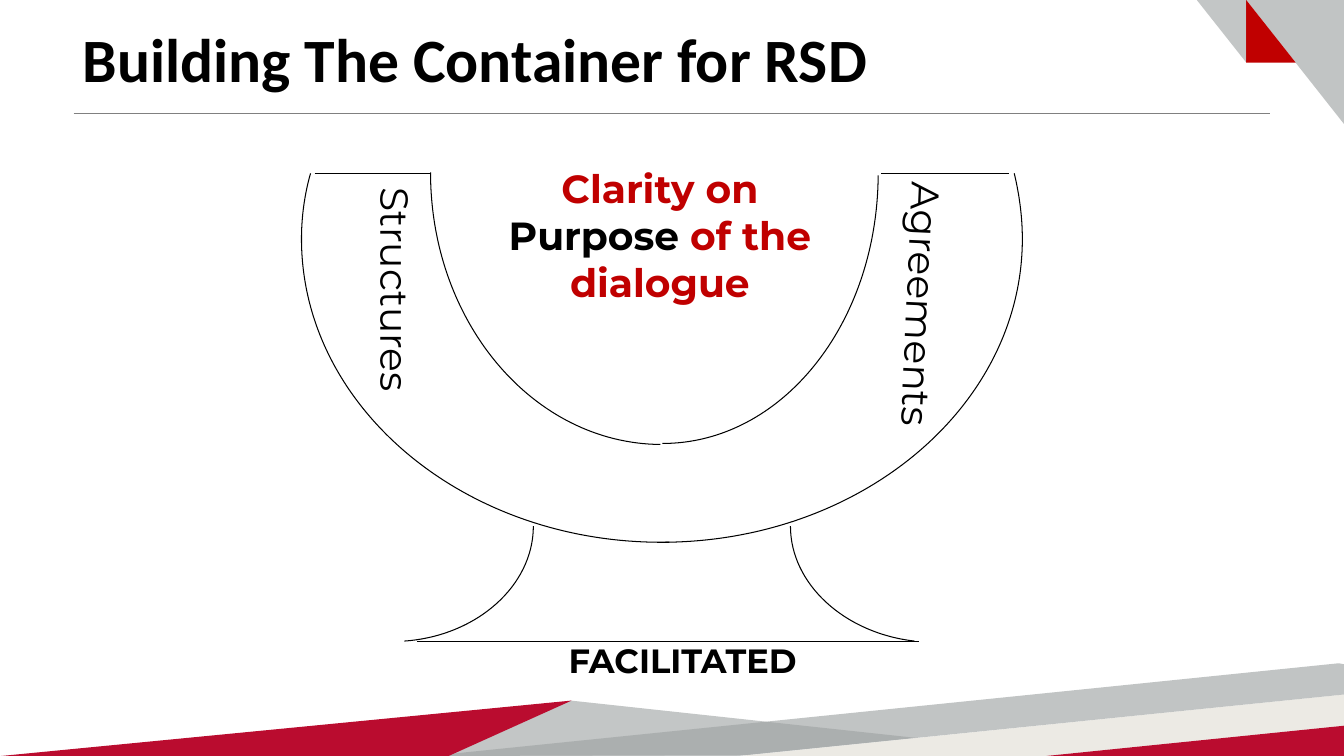
from dataclasses import dataclass
from typing import NamedTuple, Optional

from lxml.etree import SubElement
from pptx import Presentation
from pptx.dml.color import RGBColor
from pptx.enum.shapes import MSO_CONNECTOR
from pptx.enum.text import MSO_ANCHOR, MSO_AUTO_SIZE, PP_ALIGN
from pptx.oxml.ns import qn
from pptx.util import Inches, Pt

Point = tuple[float, float]


@dataclass(frozen=True)
class Theme:
    black: str = "000000"
    grey: str = "9EA2A2"
    sand: str = "D6D2C4"
    crimson: str = "BA0C2F"
    red: str = "C00000"
    rule: str = "808080"
    title_font: str = "Calibri"
    body_font: str = "Montserrat"
    title_size: int = 44
    body_size: int = 28
    caption_size: int = 24
    outline: float = 0.75
    hairline: float = 0.25


THEME = Theme()


class Facet(NamedTuple):
    corners: list[Point]
    color: str
    opacity: int = 100


class Line(NamedTuple):
    start: Point
    end: Point
    color: str = THEME.black
    width: float = THEME.outline


class Curve(NamedTuple):
    """Cubic Bezier pieces end to end: a start, then three points per piece."""
    points: list[Point]


class Run(NamedTuple):
    text: str
    color: str = THEME.black


class Label(NamedTuple):
    box: tuple[float, float, float, float]
    runs: list[Run]
    size: int = THEME.body_size
    bold: bool = False
    vertical: bool = False
    rotation: float = 0
    wrap: bool = True
    space_after: Optional[int] = None


FACETS = [
    Facet([(13.33, 0), (12.36, 0), (13.33, 1.23)], THEME.grey, 63),
    Facet([(12.36, 0.62), (12.85, 0.62), (12.36, 0)], THEME.red),
    Facet([(12.36, 0), (11.87, 0), (12.36, 0.62)], THEME.grey, 61),
    Facet([(4.44, 7.5), (7.4, 7.49), (9.08, 7.32), (5.66, 6.95)], THEME.grey, 61),
    Facet([(10.39, 7.5), (13.33, 7.2), (13.33, 6.89), (7.34, 7.5)], THEME.sand, 45),
    Facet([(13.33, 7.5), (13.33, 7.2), (10.38, 7.5)], THEME.crimson),
    Facet([(4.26, 7.5), (7.32, 7.5), (13.33, 6.89), (13.33, 6.59), (13.28, 6.58)],
          THEME.grey, 63),
    Facet([(0.01, 7.5), (5.67, 6.95), (4.45, 7.5)], THEME.crimson),
]
TITLE_RULE = Line((0.73, 1.12), (12.6, 1.12), THEME.rule, THEME.hairline)

VESSEL_CURVES = [
    Curve([(6.6, 5.38), (8.56, 5.36), (10.14, 4.02), (10.14, 2.37),
           (10.14, 2.15), (10.11, 1.93), (10.06, 1.72)]),
    Curve([(6.64, 5.38), (6.61, 5.38), (6.59, 5.38), (6.56, 5.38),
           (4.59, 5.38), (2.99, 4.03), (2.99, 2.37),
           (2.99, 2.15), (3.02, 1.93), (3.08, 1.72)]),
    Curve([(6.55, 4.41), (5.29, 4.4), (4.27, 3.2), (4.27, 1.71)]),
    Curve([(6.57, 4.4), (7.75, 4.4), (8.7, 3.22), (8.71, 1.74)]),
    Curve([(4.01, 6.36), (4.73, 6.31), (5.29, 5.81), (5.29, 5.22)]),
    Curve([(9.07, 6.36), (8.37, 6.28), (7.84, 5.79), (7.84, 5.22)]),
]
VESSEL_LINES = [
    Line((3.12, 1.72), (4.27, 1.72)),
    Line((8.74, 1.72), (10.01, 1.72)),
    Line((4.14, 6.36), (9.12, 6.36)),
]
PURPOSE = Label((4.76, 1.58, 3.57, 0.43),
                [Run("Clarity on ", THEME.red), Run("Purpose"),
                 Run(" of the dialogue", THEME.red)],
                bold=True, space_after=12)
SIDE_LABELS = [
    Label((8.75, 1.71, 0.67, 2.98), [Run("Agreements")], vertical=True, rotation=2.6),
    Label((3.54, 1.76, 0.67, 2.38), [Run("Structures")], vertical=True, wrap=False),
]
CAPTION = Label((2.6, 6.3, 8.34, 0.5), [Run("FACILITATED")],
                size=THEME.caption_size, bold=True)


def rgb(color: str) -> RGBColor:
    return RGBColor.from_string(color)


def add_outline(shapes, points: list[Point], closed: bool):
    (start, *rest) = [(Inches(x), Inches(y)) for x, y in points]
    builder = shapes.build_freeform(*start, scale=1.0)
    builder.add_line_segments(rest, close=closed)
    shape = builder.convert_to_shape()
    shape.shadow.inherit = False
    return shape


def add_facet(shapes, facet: Facet) -> None:
    shape = add_outline(shapes, facet.corners, closed=True)
    shape.fill.solid()
    shape.fill.fore_color.rgb = rgb(facet.color)
    shape.line.fill.background()
    if facet.opacity < 100:
        color = shape.fill._xPr.find(f"{qn('a:solidFill')}/{qn('a:srgbClr')}")
        SubElement(color, qn("a:alpha"), val=str(facet.opacity * 1000))


def bend_segments(shape) -> None:
    """Merge every three straight segments into one cubic Bezier segment."""
    outline = next(shape._element.iter(qn("a:path")))
    segments = outline.findall(qn("a:lnTo"))
    for first in range(0, len(segments), 3):
        bezier = SubElement(outline, qn("a:cubicBezTo"))
        for segment in segments[first:first + 3]:
            bezier.append(segment[0])
            outline.remove(segment)


def add_curve(shapes, curve: Curve) -> None:
    shape = add_outline(shapes, curve.points, closed=False)
    bend_segments(shape)
    shape.fill.background()
    shape.line.color.rgb = rgb(THEME.black)
    shape.line.width = Pt(THEME.outline)


def add_line(shapes, line: Line) -> None:
    ends = [Inches(value) for value in (*line.start, *line.end)]
    connector = shapes.add_connector(MSO_CONNECTOR.STRAIGHT, *ends)
    connector.line.color.rgb = rgb(line.color)
    connector.line.width = Pt(line.width)
    SubElement(connector._element.spPr, qn("a:effectLst"))


def add_label(shapes, label: Label) -> None:
    shape = shapes.add_textbox(*map(Inches, label.box))
    shape.rotation = label.rotation
    frame = shape.text_frame
    frame.word_wrap = label.wrap
    paragraph = frame.paragraphs[0]
    if label.vertical:
        frame._txBody.bodyPr.set("vert", "eaVert")
    else:
        paragraph.alignment = PP_ALIGN.CENTER
    if label.space_after:
        paragraph.space_after = Pt(label.space_after)
    else:
        frame.auto_size = MSO_AUTO_SIZE.SHAPE_TO_FIT_TEXT
    paragraph.font.name = THEME.body_font
    paragraph.font.size = Pt(label.size)
    paragraph.font.bold = label.bold
    for part in label.runs:
        run = paragraph.add_run()
        run.text = part.text
        run.font.color.rgb = rgb(part.color)


def format_title(title, text: str) -> None:
    title.left, title.top, title.width, title.height = map(Inches, (0.72, 0.24, 9.69, 0.86))
    title.text_frame.text = text
    title.text_frame.vertical_anchor = MSO_ANCHOR.TOP
    paragraph = title.text_frame.paragraphs[0]
    paragraph.alignment = PP_ALIGN.LEFT
    paragraph.line_spacing = 0.9
    paragraph.font.name = THEME.title_font
    paragraph.font.size = Pt(THEME.title_size)
    paragraph.font.bold = True
    paragraph.font.color.rgb = rgb(THEME.black)


def main() -> None:
    presentation = Presentation()
    presentation.slide_width, presentation.slide_height = Inches(13.33), Inches(7.5)
    slide = presentation.slides.add_slide(presentation.slide_layouts[5])
    format_title(slide.shapes.title, "Building The Container for RSD")
    for facet in FACETS:
        add_facet(slide.shapes, facet)
    add_line(slide.shapes, TITLE_RULE)

    vessel = slide.shapes.add_group_shape().shapes
    for curve in VESSEL_CURVES:
        add_curve(vessel, curve)
    for line in VESSEL_LINES:
        add_line(vessel, line)
    add_label(vessel, PURPOSE)
    for label in [*SIDE_LABELS, CAPTION]:
        add_label(slide.shapes, label)
    presentation.save("out.pptx")


if __name__ == "__main__":
    main()
